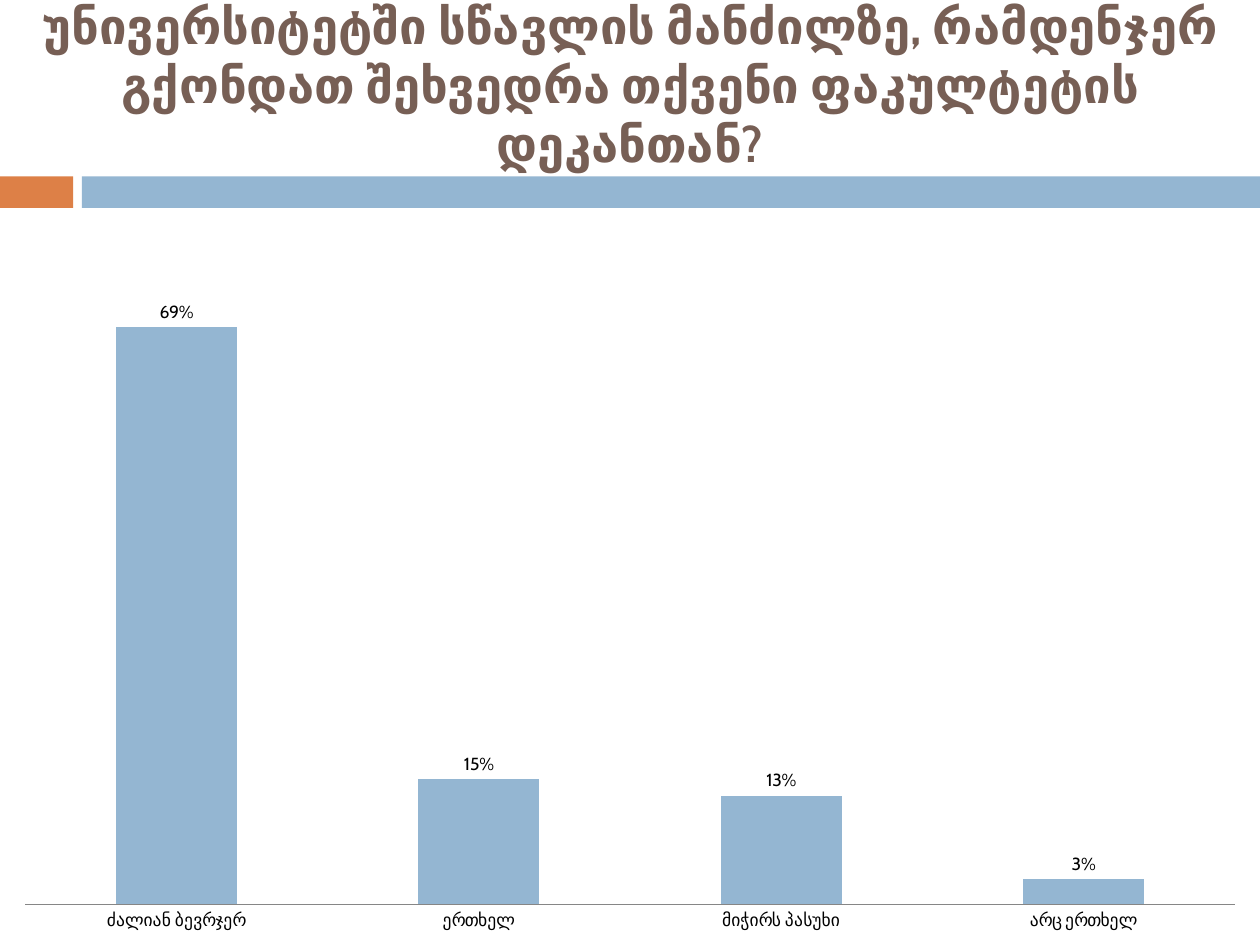
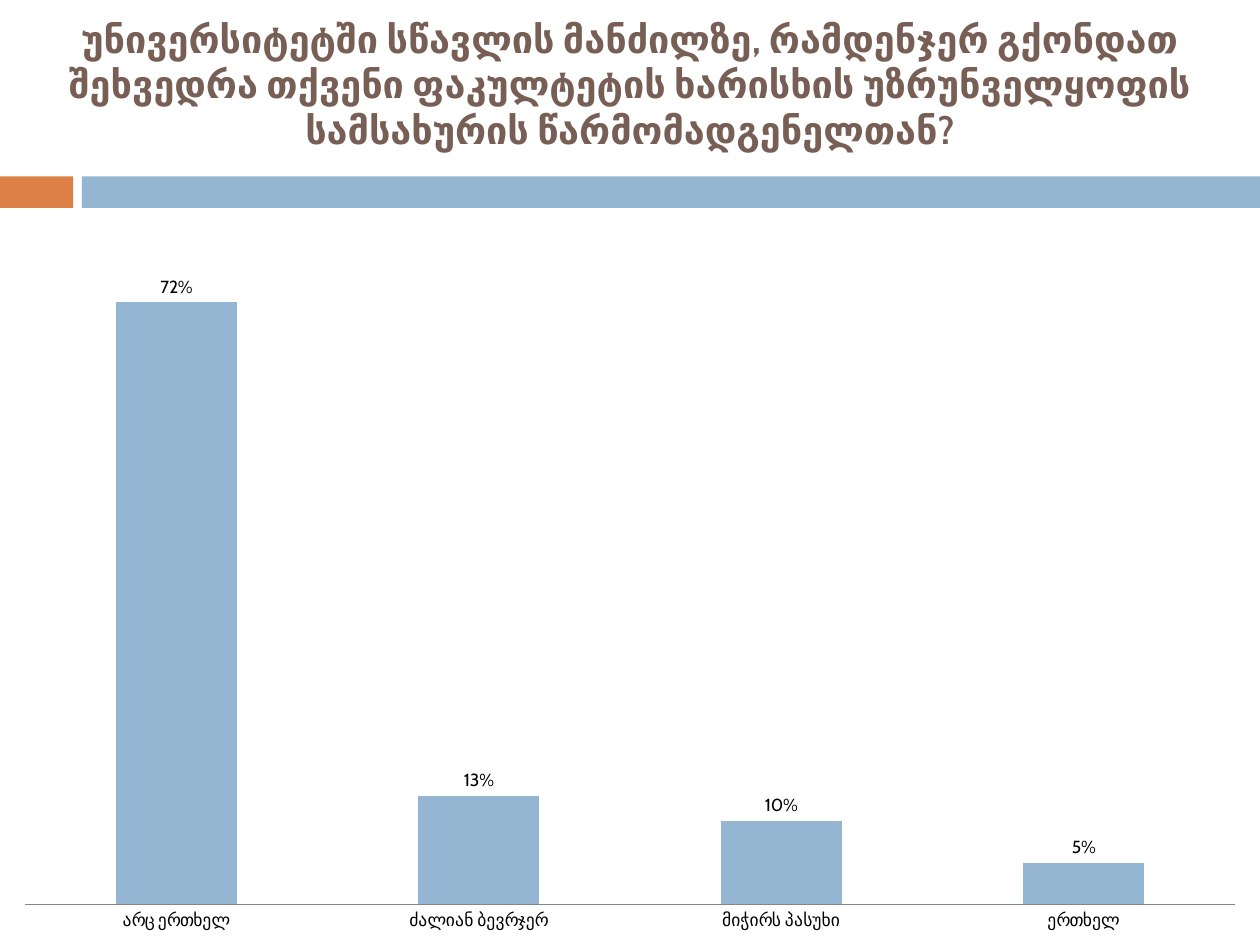
from dataclasses import dataclass

from pptx import Presentation
from pptx.chart.data import CategoryChartData
from pptx.dml.color import RGBColor
from pptx.enum.chart import XL_CHART_TYPE as ChartType
from pptx.enum.chart import XL_LABEL_POSITION as LabelPosition
from pptx.enum.chart import XL_TICK_MARK as TickMark
from pptx.enum.shapes import MSO_SHAPE as Shape
from pptx.enum.text import MSO_ANCHOR as Anchor
from pptx.enum.text import PP_ALIGN as Align
from pptx.util import Inches, Pt


@dataclass(frozen=True)
class Theme:
    font: str = "Cabin"
    title_color: RGBColor = RGBColor.from_string("775F55")
    orange: RGBColor = RGBColor.from_string("DD8047")
    blue: RGBColor = RGBColor.from_string("94B6D2")
    axis_color: RGBColor = RGBColor.from_string("868686")
    chart_text: RGBColor = RGBColor.from_string("000000")
    large_title: Pt = Pt(28)
    small_title: Pt = Pt(21.6)
    chart_size: Pt = Pt(10)


theme = Theme()
SLIDE_WIDTH, SLIDE_HEIGHT = 10, 7.5
TITLE_HEIGHT = 1.33
BAND_TOP, BAND_HEIGHT = 1.4, 0.25
CHART_TOP = 1.75
BANDS = [(0, 0.58, theme.orange), (0.65, SLIDE_WIDTH - 0.65, theme.blue)]

NEVER, ONCE = "არც ერთხელ", "ერთხელ"
VERY_OFTEN, HARD_TO_SAY = "ძალიან ბევრჯერ", "მიჭირს პასუხი"

questions = [
    (
        "უნივერსიტეტში სწავლის მანძილზე, რამდენჯერ გქონდათ შეხვედრა "
        "თქვენი ფაკულტეტის დეკანთან?",
        theme.large_title,
        {VERY_OFTEN: 0.69, ONCE: 0.15, HARD_TO_SAY: 0.13, NEVER: 0.03},
    ),
    (
        "უნივერსიტეტში სწავლის მანძილზე, რამდენჯერ გქონდათ შეხვედრა "
        "თქვენი ფაკულტეტის ხარისხის უზრუნველყოფის სამსახურის "
        "წარმომადგენელთან?",
        theme.small_title,
        {NEVER: 0.72, VERY_OFTEN: 0.13, HARD_TO_SAY: 0.1, ONCE: 0.05},
    ),
]


def add_heading(slide, question, size):
    """Add the two coloured bands and the question above them."""
    for left, width, color in BANDS:
        band = slide.shapes.add_shape(
            Shape.RECTANGLE, Inches(left), Inches(BAND_TOP),
            Inches(width), Inches(BAND_HEIGHT))
        band.shadow.inherit = False
        band.fill.solid()
        band.fill.fore_color.rgb = color
        band.line.fill.background()

    title = slide.shapes.add_textbox(
        0, 0, Inches(SLIDE_WIDTH), Inches(TITLE_HEIGHT))
    text_frame = title.text_frame
    text_frame.word_wrap = True
    text_frame.vertical_anchor = Anchor.MIDDLE
    text_frame.text = question
    paragraph = text_frame.paragraphs[0]
    paragraph.alignment = Align.CENTER
    font = paragraph.runs[0].font
    font.name, font.size, font.bold = theme.font, size, True
    font.color.rgb = theme.title_color


def add_answer_chart(slide, answers):
    data = CategoryChartData(number_format="0%")
    data.categories = list(answers)
    data.add_series("Series 1", list(answers.values()))
    chart = slide.shapes.add_chart(
        ChartType.COLUMN_CLUSTERED, 0, Inches(CHART_TOP),
        Inches(SLIDE_WIDTH), Inches(SLIDE_HEIGHT - CHART_TOP), data).chart
    chart.has_legend = False
    chart.has_title = False
    chart.font.name, chart.font.size = theme.font, theme.chart_size
    chart.font.color.rgb = theme.chart_text

    chart.category_axis.major_tick_mark = TickMark.NONE
    chart.category_axis.format.line.color.rgb = theme.axis_color
    value_axis = chart.value_axis
    value_axis.visible = False
    value_axis.has_major_gridlines = False
    value_axis.minimum_scale, value_axis.maximum_scale = 0, 0.8
    value_axis.tick_labels.number_format = "0%"
    value_axis.tick_labels.number_format_is_linked = False

    plot = chart.plots[0]
    plot.vary_by_categories = False
    plot.gap_width, plot.overlap = 150, -25
    fill = plot.series[0].format.fill
    fill.solid()
    fill.fore_color.rgb = theme.blue
    plot.has_data_labels = True
    labels = plot.data_labels
    labels.show_value = True
    labels.number_format = "0%"
    labels.number_format_is_linked = False
    labels.position = LabelPosition.OUTSIDE_END


presentation = Presentation()
presentation.slide_width = Inches(SLIDE_WIDTH)
presentation.slide_height = Inches(SLIDE_HEIGHT)
blank_layout = presentation.slide_layouts[6]

for question, title_size, answers in questions:
    slide = presentation.slides.add_slide(blank_layout)
    add_heading(slide, question, title_size)
    add_answer_chart(slide, answers)

presentation.save("out.pptx")
